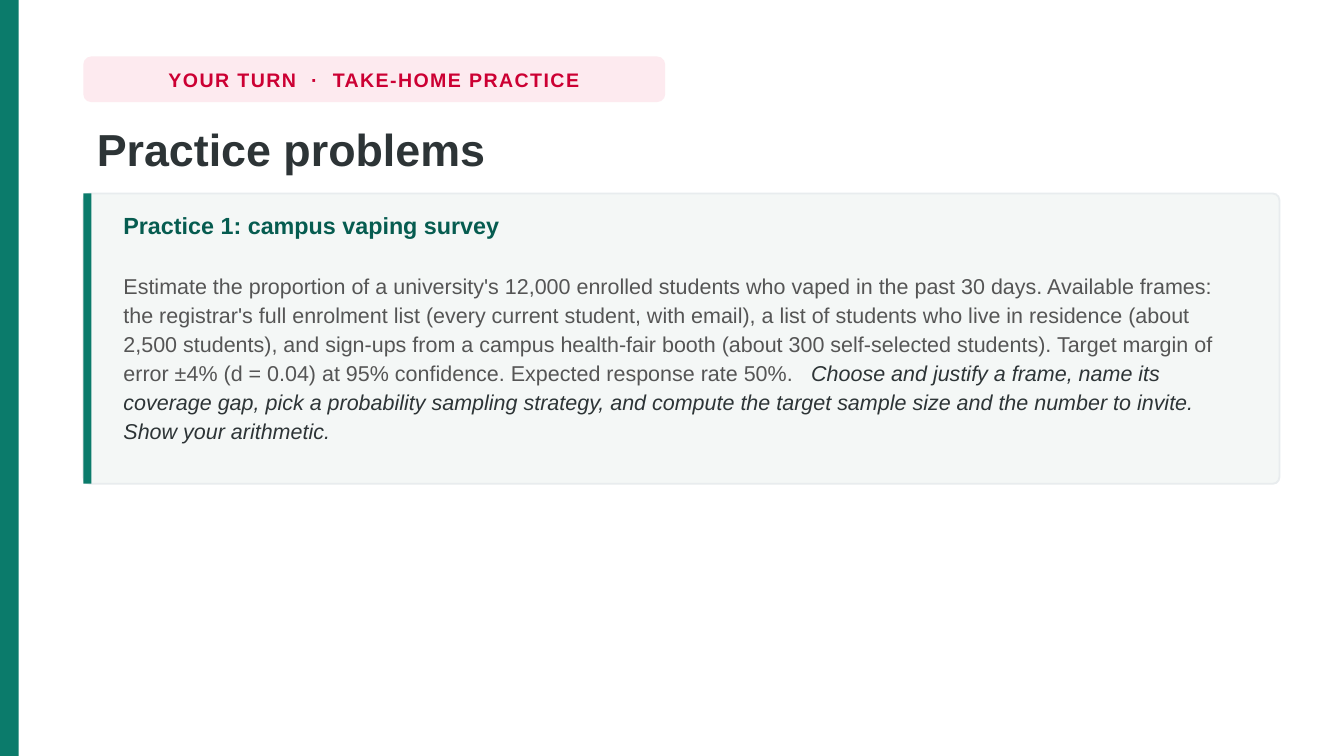
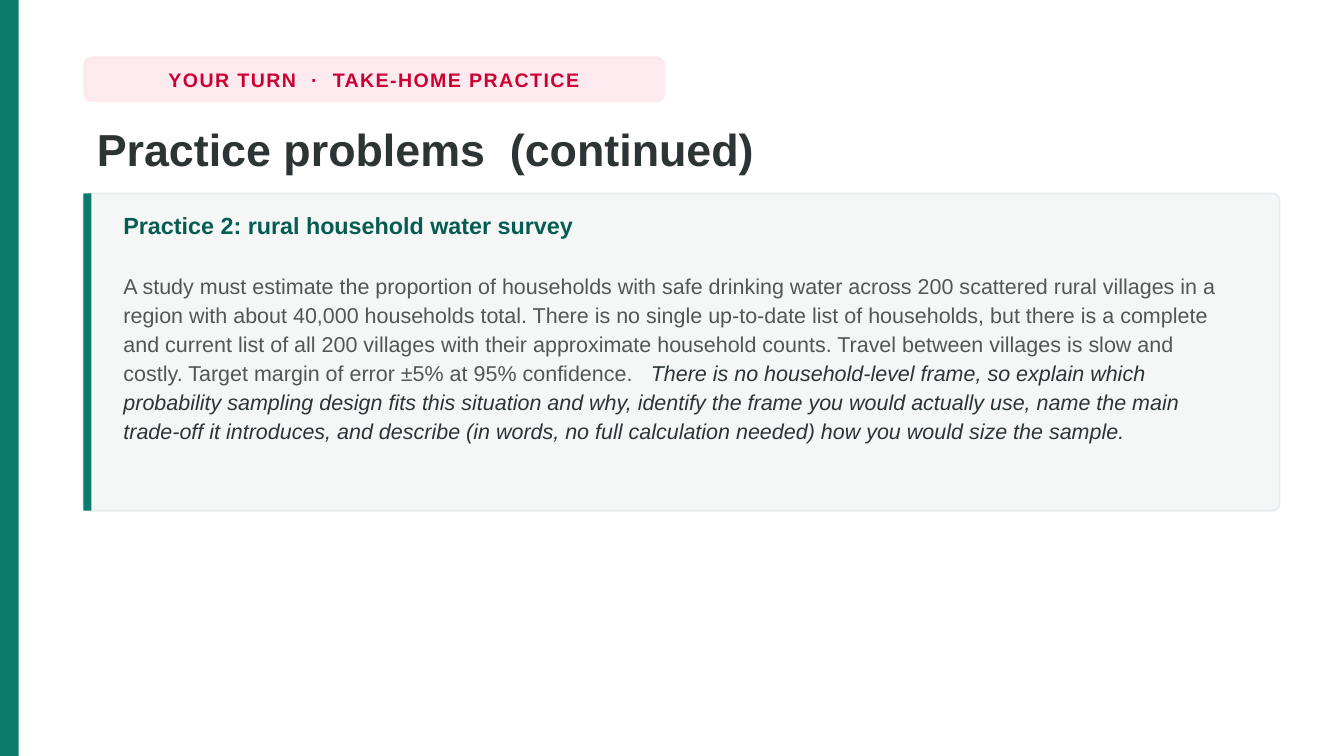
import dataclasses

import pptx
import pptx.dml.color
import pptx.enum.shapes
import pptx.enum.text
import pptx.util

Inches = pptx.util.Inches
Kind = pptx.enum.shapes.MSO_SHAPE
Align = pptx.enum.text.PP_ALIGN
Anchor = pptx.enum.text.MSO_ANCHOR


@dataclasses.dataclass(frozen=True)
class Theme:
    font: str = "Arial"
    green: str = "0B7B6B"
    deep: str = "065C50"
    pink: str = "FDEAEF"
    red: str = "CC0033"
    ink: str = "2D3436"
    gray: str = "555555"
    panel: str = "F4F7F6"
    edge: str = "E8ECEE"
    tag: float = 10.5
    title: float = 24
    head: float = 12.5
    body: float = 11.5


theme = Theme()
rgb = pptx.dml.color.RGBColor.from_string


def add_box(slide, kind, place, fill, round=0):
    """Add a plain filled shape; round is the corner radius in inches."""
    box = slide.shapes.add_shape(kind, *map(Inches, place))
    box.shadow.inherit = False
    box.fill.solid()
    box.fill.fore_color.rgb = rgb(fill)
    box.line.fill.background()
    if round:
        box.adjustments[0] = round / min(place[2:])
    return box


def add_run(para, text, size, color, bold=False, italic=False):
    run = para.add_run()
    run.text = text
    font = run.font
    font.name, font.size = theme.font, pptx.util.Pt(size)
    font.bold, font.italic = bold, italic
    font.color.rgb = rgb(color)
    return run


# Content: title, card height, heading, setting, task
pages = [
    (
        "Practice problems",
        2.16,
        "Practice 1: campus vaping survey",
        "Estimate the proportion of a university's 12,000 enrolled students who "
        "vaped in the past 30 days. Available frames: the registrar's full "
        "enrolment list (every current student, with email), a list of students "
        "who live in residence (about 2,500 students), and sign-ups from a campus "
        "health-fair booth (about 300 self-selected students). Target margin of "
        "error ±4% (d = 0.04) at 95% confidence. Expected response rate 50%.   ",
        "Choose and justify a frame, name its coverage gap, pick a probability "
        "sampling strategy, and compute the target sample size and the number to "
        "invite. Show your arithmetic.",
    ),
    (
        "Practice problems  (continued)",
        2.36,
        "Practice 2: rural household water survey",
        "A study must estimate the proportion of households with safe drinking "
        "water across 200 scattered rural villages in a region with about 40,000 "
        "households total. There is no single up-to-date list of households, but "
        "there is a complete and current list of all 200 villages with their "
        "approximate household counts. Travel between villages is slow and "
        "costly. Target margin of error ±5% at 95% confidence.   ",
        "There is no household-level frame, so explain which probability sampling "
        "design fits this situation and why, identify the frame you would "
        "actually use, name the main trade-off it introduces, and describe (in "
        "words, no full calculation needed) how you would size the sample.",
    ),
]

# Page grid, 16:9
wide = 10
tall = wide * 9 / 16
left, span = 0.62, 8.9
top = 1.44

deck = pptx.Presentation()
deck.slide_width, deck.slide_height = Inches(wide), Inches(tall)
layout = deck.slide_layouts.get_by_name("Title Only")

for name, high, head, setting, task in pages:
    slide = deck.slides.add_slide(layout)

    # Side band
    add_box(slide, Kind.RECTANGLE, (0, 0, 0.14, tall), theme.green)

    # Section tag
    tag = add_box(slide, Kind.ROUNDED_RECTANGLE, (left, 0.42, 4.33, 0.34),
                  theme.pink, 0.06)
    tag.text_frame.word_wrap = False
    tag.text_frame.vertical_anchor = Anchor.MIDDLE
    para = tag.text_frame.paragraphs[0]
    para.alignment = Align.CENTER
    run = add_run(para, "YOUR TURN  ·  TAKE-HOME PRACTICE", theme.tag,
                  theme.red, bold=True)
    run.font._element.set("spc", "80")

    # Title
    title = slide.shapes.title
    title.left, title.top = Inches(left), Inches(0.84)
    title.width, title.height = Inches(span), Inches(0.56)
    frame = title.text_frame
    frame.auto_size = pptx.enum.text.MSO_AUTO_SIZE.NONE
    frame.vertical_anchor = Anchor.TOP
    frame.margin_top = Inches(0.06)
    para = frame.paragraphs[0]
    para.alignment = Align.LEFT
    para.line_spacing = 1.02
    add_run(para, name, theme.title, theme.ink, bold=True)

    # Problem card with accent bar
    card = add_box(slide, Kind.ROUNDED_RECTANGLE, (left, top, span, high),
                   theme.panel, 0.05)
    card.line.color.rgb = rgb(theme.edge)
    card.line.width = pptx.util.Pt(1)
    add_box(slide, Kind.RECTANGLE, (left, top, 0.06, high), theme.green)

    # Problem text
    place = (left + 0.2, top + 0.08, span - 0.42, high - 0.16)
    frame = slide.shapes.add_textbox(*map(Inches, place)).text_frame
    frame.word_wrap = True
    frame.margin_top = Inches(0.03)
    para = frame.paragraphs[0]
    para.line_spacing = 1.12
    add_run(para, head, theme.head, theme.deep, bold=True)
    para = frame.add_paragraph()
    para.line_spacing = 1.12
    para.space_before = pptx.util.Pt(16.5)
    add_run(para, setting, theme.body, theme.gray)
    add_run(para, task, theme.body, theme.ink, italic=True)

deck.save("out.pptx")
